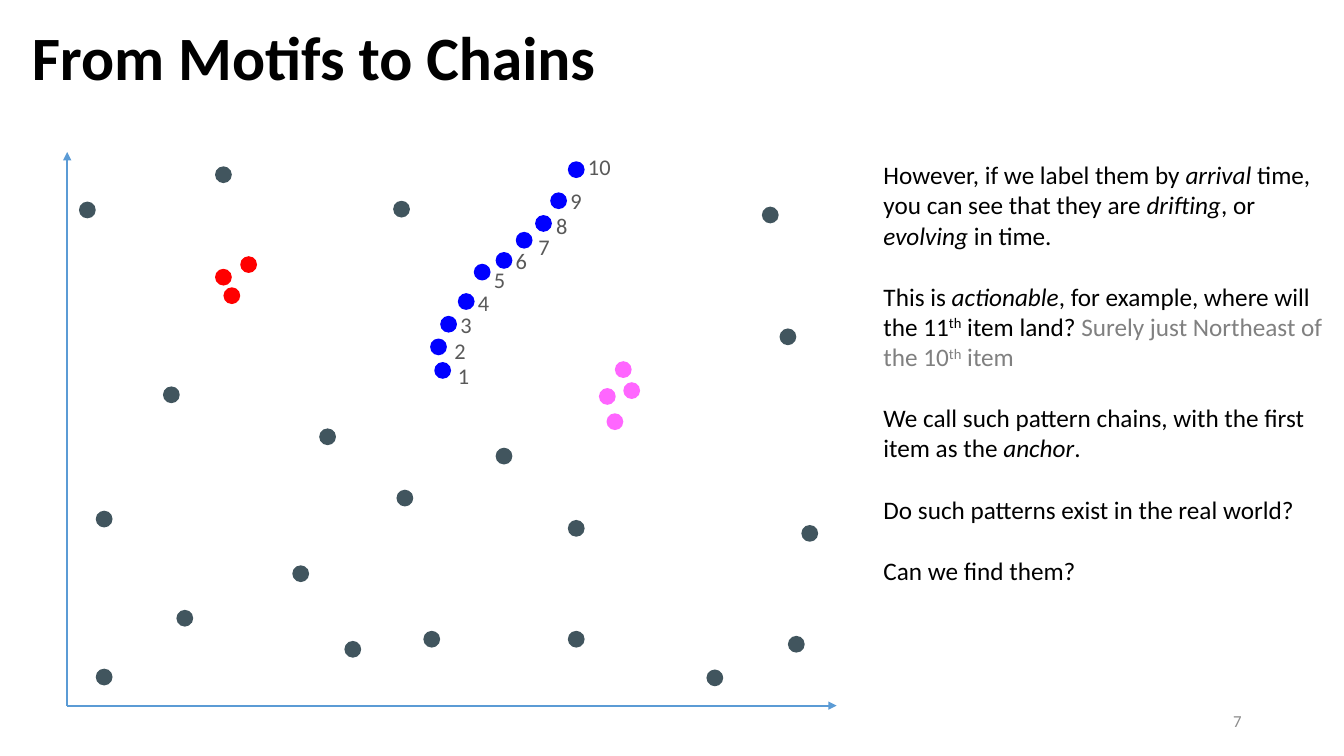
"""Build the slide about moving from motifs to chains."""
from lxml import etree
from pptx import Presentation
from pptx import util as u
from pptx.dml.color import RGBColor
from pptx.enum import shapes, text
from pptx.oxml import ns

COLUMNS, ROWS = 80, 45
WIDTH, HEIGHT = u.Inches(13.33), u.Inches(7.5)
FONT = "Calibri"
BLACK, GREY = "000000", "808080"
BODY_SIZE, BODY_GAP = 18, 22

SCATTER = {
    "41555E": [
        (4.7, 12), (12.8, 9.9), (23.4, 11.95), (45.35, 12.3), (46.4, 19.55),
        (9.7, 23), (19, 25.5), (29.5, 26.65), (5.7, 30.4), (23.6, 29.15),
        (33.8, 30.95), (47.7, 31.25), (17.4, 33.65), (10.5, 36.3),
        (20.5, 38.15), (25.2, 37.55), (33.8, 37.55), (46.9, 37.85),
        (5.7, 39.8), (42.05, 39.85),
    ],
    "FF0000": [(12.8, 16), (14.3, 15.25), (13.3, 17.1)],
    "FF66FF": [(37.1, 22.75), (36.6, 21.5), (36.1, 24.6), (35.65, 23.1)],
}

CHAIN = [
    ((25.85, 21.55), (27.25, 21.55)),
    ((25.6, 20.15), (27.05, 20.05)),
    ((26.2, 18.8), (27.4, 18.55)),
    ((27.25, 17.45), (28.45, 17.2)),
    ((28.2, 15.7), (29.4, 15.85)),
    ((29.5, 15), (30.7, 14.7)),
    ((30.7, 13.8), (32.05, 13.85)),
    ((31.85, 12.8), (33.1, 12.6)),
    ((32.75, 11.45), (33.95, 11.15)),
    ((33.8, 9.6), (35, 9.1)),
]

ITALIC = {"italic": True}
RAISED = {"raised": True}
BODY = [
    [("However, if we label them by ", {}), ("arrival", ITALIC),
     (" time, you can see that they are ", {}), ("drifting", ITALIC),
     (", or ", {}), ("evolving", ITALIC), (" in time.", {})],
    [("This is ", {}), ("actionable", ITALIC),
     (", for example, where will the 11", {}), ("th", RAISED),
     (" item land? ", {}),
     ("Surely just Northeast of the 10", {"color": GREY}),
     ("th", {"color": GREY, "raised": True}), (" item", {"color": GREY})],
    [("We call such pattern chains, with the first item as the ", {}),
     ("anchor", ITALIC), (".", {})],
    [("Do such patterns exist in the real world?", {})],
    [("Can we find them?", {})],
]


def rgb(value):
    """Turn a hex string into a colour."""
    return RGBColor.from_string(value)


def across(columns):
    """Convert grid columns to a length."""
    return round(WIDTH * columns / COLUMNS)


def down(rows):
    """Convert grid rows to a length."""
    return round(HEIGHT * rows / ROWS)


def place(column, row, columns, rows):
    """Return left, top, width and height of a grid area."""
    return across(column), down(row), across(columns), down(rows)


def add_run(paragraph, words, size=BODY_SIZE, color=BLACK, bold=False,
            italic=False, raised=False):
    """Append formatted words to a paragraph."""
    run = paragraph.add_run()
    run.text = words
    font = run.font
    font.name, font.size = FONT, u.Pt(size)
    font.bold, font.italic = bold, italic
    font.color.rgb = rgb(color)
    if raised:
        run._r.get_or_add_rPr().set("baseline", "30000")


def add_frame(slide, area, anchor=text.MSO_ANCHOR.TOP, inset=True):
    """Add a wrapping text box and return its text frame."""
    frame = slide.shapes.add_textbox(*place(*area)).text_frame
    frame.word_wrap = True
    frame.vertical_anchor = anchor
    if not inset:
        frame.margin_left = frame.margin_right = 0
        frame.margin_top = frame.margin_bottom = 0
    return frame


def add_dot(slide, position, color):
    """Add a data point one grid cell wide."""
    dot = slide.shapes.add_shape(
        shapes.MSO_SHAPE.OVAL, *place(*position, 1, 1))
    dot.shadow.inherit = False
    dot.fill.solid()
    dot.fill.fore_color.rgb = rgb(color)
    dot.line.fill.background()


def add_axis(slide, start, end):
    """Add an axis line with an arrowhead at its end."""
    axis = slide.shapes.add_connector(
        shapes.MSO_CONNECTOR.STRAIGHT, across(start[0]), down(start[1]),
        across(end[0]), down(end[1]))
    axis.line.color.rgb = rgb("5B9BD5")
    axis.line.width = u.Pt(1.5)
    etree.SubElement(axis.line._get_or_add_ln(), ns.qn("a:tailEnd"),
                     type="triangle")
    etree.SubElement(axis._element.spPr, ns.qn("a:effectLst"))


def add_plot(slide):
    """Draw the axes, the scattered points and the numbered chain."""
    origin = (4, 42)
    add_axis(slide, origin, (49.8, 42))
    add_axis(slide, origin, (4, 9.05))
    for color, positions in SCATTER.items():
        for position in positions:
            add_dot(slide, position, color)
    for number, (position, label) in enumerate(CHAIN, start=1):
        add_dot(slide, position, "0000FF")
        frame = add_frame(slide, (*label, 2, 1.7), inset=False)
        add_run(frame.paragraphs[0], str(number), size=16, color="595959")


def add_body(slide):
    """Add the explanation beside the plot."""
    frame = add_frame(slide, (52, 9.2, 27.8, 27.85))
    for index, runs in enumerate(BODY):
        paragraph = frame.add_paragraph() if index else frame.paragraphs[0]
        paragraph.space_before = u.Pt(BODY_GAP if index else 0)
        for words, style in runs:
            add_run(paragraph, words, **style)


def main():
    """Build and save the presentation."""
    presentation = Presentation()
    presentation.slide_width, presentation.slide_height = WIDTH, HEIGHT
    slide = presentation.slides.add_slide(presentation.slide_layouts[6])

    add_plot(slide)
    add_body(slide)

    title = add_frame(slide, (1.3, 1.25, 69, 4.7), text.MSO_ANCHOR.MIDDLE)
    title.paragraphs[0].line_spacing = 0.9
    add_run(title.paragraphs[0], "From Motifs to Chains", size=44, bold=True)

    page = add_frame(slide, (56.5, 41.7, 18, 2.4), text.MSO_ANCHOR.MIDDLE)
    page.paragraphs[0].alignment = text.PP_ALIGN.RIGHT
    add_run(page.paragraphs[0], "7", size=12, color="8C8C8C")

    presentation.save("out.pptx")


if __name__ == "__main__":
    main()
